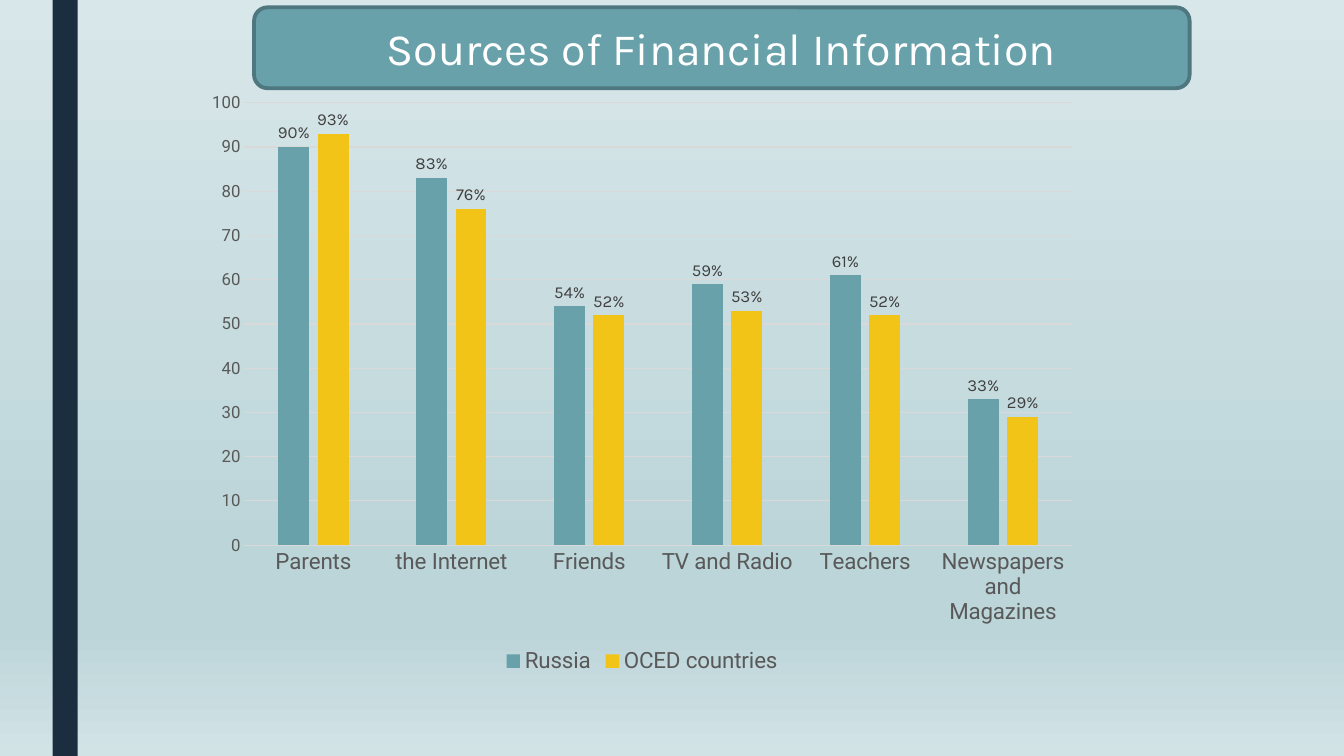
from copy import deepcopy
from dataclasses import dataclass

from pptx import Presentation
from pptx import util as u
from pptx.chart.data import CategoryChartData
from pptx.dml.color import RGBColor
from pptx.enum import chart as ch, shapes, text
from pptx.oxml.ns import qn

PX = 9525  # EMU per px
SLIDE_WIDTH, SLIDE_HEIGHT = 1280, 720

NAVY = RGBColor(0x1A, 0x2E, 0x40)
TEAL = RGBColor(0x69, 0xA1, 0xAB)
DARK_TEAL = RGBColor(0x4E, 0x77, 0x7F)
YELLOW = RGBColor(0xF2, 0xC4, 0x18)
WHITE = RGBColor(0xFF, 0xFF, 0xFF)
AXIS_GREY = RGBColor(0x59, 0x59, 0x59)
LABEL_GREY = RGBColor(0x40, 0x40, 0x40)
GRID_GREY = RGBColor(0xD9, 0xD9, 0xD9)
PALE = RGBColor(0xD8, 0xE7, 0xE9)
MIST = RGBColor(0xBC, 0xD5, 0xD9)
HAZE = RGBColor(0xD2, 0xE3, 0xE6)

BACKGROUND_STOPS = [(0, PALE), (0.74, MIST), (0.83, MIST), (1, HAZE)]
SOURCES = ["Parents", "the Internet", "Friends", "TV and Radio", "Teachers",
           "Newspapers and Magazines"]


@dataclass(frozen=True)
class Box:
    left: int
    top: int
    width: int
    height: int

    def emu(self) -> list[int]:
        return [side * PX for side in (self.left, self.top, self.width, self.height)]


@dataclass(frozen=True)
class Panel:
    kind: shapes.MSO_SHAPE
    box: Box
    fill: RGBColor
    border: RGBColor | None = None


@dataclass(frozen=True)
class Region:
    name: str
    percentages: tuple[int, ...]
    color: RGBColor


SIDE_BAND = Panel(shapes.MSO_SHAPE.RECTANGLE, Box(50, 0, 24, SLIDE_HEIGHT), NAVY)
TITLE_PANEL = Panel(shapes.MSO_SHAPE.ROUNDED_RECTANGLE, Box(242, 7, 891, 77),
                    TEAL, DARK_TEAL)
CHART_BOX = Box(185, 77, 853, 569)
REGIONS = [
    Region("Russia", (90, 83, 54, 59, 61, 33), TEAL),
    Region("OCED countries", (93, 76, 52, 53, 52, 29), YELLOW),
]


def style_font(font, name: str, size: int, color: RGBColor) -> None:
    formats = {"name": name, "size": u.Pt(size), "bold": False}
    for attribute, value in formats.items():
        setattr(font, attribute, value)
    font.color.rgb = color


def style_line(line, color: RGBColor, width: float) -> None:
    line.color.rgb = color
    line.width = u.Pt(width)


def paint_background(slide) -> None:
    fill = slide.background.fill
    fill.gradient()
    fill.gradient_angle = 270
    stop_list = next(slide.element.iter(qn("a:gsLst")))
    while len(stop_list) < len(BACKGROUND_STOPS):
        stop_list.append(deepcopy(stop_list[0]))
    for stop, (position, color) in zip(fill.gradient_stops, BACKGROUND_STOPS):
        stop.position = position
        stop.color.rgb = color


def add_panel(slide, panel: Panel):
    shape = slide.shapes.add_shape(panel.kind, *panel.box.emu())
    shape.shadow.inherit = False
    shape.fill.solid()
    shape.fill.fore_color.rgb = panel.fill
    if panel.border is None:
        shape.line.fill.background()
    else:
        style_line(shape.line, panel.border, 2.75)
    return shape


def add_title(slide) -> None:
    frame = add_panel(slide, TITLE_PANEL).text_frame
    frame.vertical_anchor = text.MSO_ANCHOR.MIDDLE
    paragraph = frame.paragraphs[0]
    paragraph.alignment = text.PP_ALIGN.CENTER
    run = paragraph.add_run()
    run.text = "Sources of Financial Information"
    style_font(run.font, "Karla", 32, WHITE)


def style_axes(chart) -> None:
    for axis, size in ((chart.category_axis, 16), (chart.value_axis, 12)):
        axis.major_tick_mark = axis.minor_tick_mark = ch.XL_TICK_MARK.NONE
        style_font(axis.tick_labels.font, "Roboto", size, AXIS_GREY)
    style_line(chart.category_axis.format.line, GRID_GREY, 0.75)
    scale = chart.value_axis
    limits = {"minimum_scale": 0, "maximum_scale": 100, "major_unit": 10}
    for attribute, value in limits.items():
        setattr(scale, attribute, value)
    scale.format.line.fill.background()
    style_line(scale.major_gridlines.format.line, GRID_GREY, 0.75)


def style_columns(series, region: Region) -> None:
    series.format.fill.solid()
    series.format.fill.fore_color.rgb = region.color
    labels = series.data_labels
    formats = {"show_value": True, "number_format": '0"%"',
               "number_format_is_linked": False,
               "position": ch.XL_LABEL_POSITION.OUTSIDE_END}
    for attribute, value in formats.items():
        setattr(labels, attribute, value)
    style_font(labels.font, "Karla", 12, LABEL_GREY)


def add_sources_chart(slide) -> None:
    data = CategoryChartData()
    data.categories = SOURCES
    for region in REGIONS:
        data.add_series(region.name, region.percentages)
    chart = slide.shapes.add_chart(
        ch.XL_CHART_TYPE.COLUMN_CLUSTERED, *CHART_BOX.emu(), data).chart
    chart.has_title = False
    chart.font.name = "Karla"
    chart.font.size = u.Pt(10)

    plot = chart.plots[0]
    formats = {"gap_width": 219, "overlap": -27, "vary_by_categories": False}
    for attribute, value in formats.items():
        setattr(plot, attribute, value)
    for series, region in zip(plot.series, REGIONS):
        style_columns(series, region)
    style_axes(chart)

    chart.has_legend = True
    chart.legend.position = ch.XL_LEGEND_POSITION.BOTTOM
    chart.legend.include_in_layout = False
    style_font(chart.legend.font, "Roboto", 16, AXIS_GREY)


def main() -> None:
    deck = Presentation()
    deck.slide_width, deck.slide_height = SLIDE_WIDTH * PX, SLIDE_HEIGHT * PX
    slide = deck.slides.add_slide(deck.slide_layouts[6])
    paint_background(slide)
    add_panel(slide, SIDE_BAND)
    add_title(slide)
    add_sources_chart(slide)
    deck.save("out.pptx")


if __name__ == "__main__":
    main()
